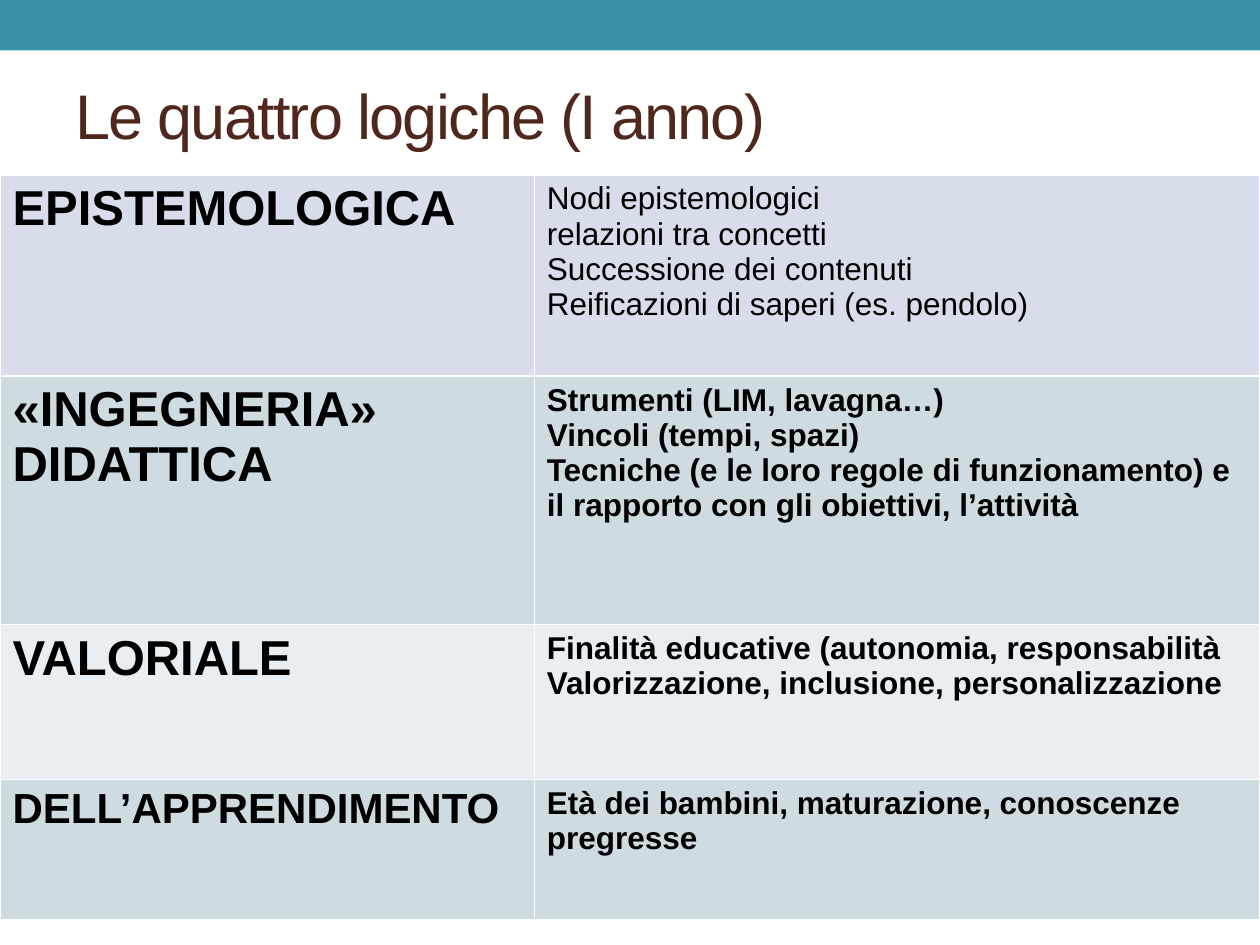
from lxml import etree
from pptx import Presentation
from pptx.dml.color import RGBColor
from pptx.enum.shapes import MSO_SHAPE
from pptx.enum.text import MSO_ANCHOR
from pptx.oxml.ns import qn
from pptx.util import Pt

RECTANGLE = MSO_SHAPE.RECTANGLE
MIDDLE = MSO_ANCHOR.MIDDLE

FONT = "Arial"
COLORS = {
    "band": "3891A7",
    "title": "4F271C",
    "text": "000000",
    "border": "FFFFFF",
    "lavender": "D7DDEB",
    "teal": "CEDCE1",
    "pale": "E8EEF1",
}


def rgb(name):
    return RGBColor.from_string(COLORS[name])


def write(frame, text, size, color="text", bold=False, spacing=None):
    """Fill a text frame, one paragraph for each line of text."""
    for index, line in enumerate(text.split("\n")):
        paragraph = frame.add_paragraph() if index else frame.paragraphs[0]
        run = paragraph.add_run()
        run.text = line
        run.font.name = FONT
        run.font.size = Pt(size)
        run.font.bold = bold
        run.font.color.rgb = rgb(color)
        if spacing is not None:
            run.font._element.set("spc", str(int(spacing * 100)))


class SlideBuilder:
    def __init__(self, slide):
        self.slide = slide

    def band(self, left, top, width, height, color):
        band = self.slide.shapes.add_shape(
            RECTANGLE, Pt(left), Pt(top), Pt(width), Pt(height))
        band.shadow.inherit = False
        band.fill.solid()
        band.fill.fore_color.rgb = rgb(color)
        band.line.fill.background()

    def text(self, left, top, width, height, text, **style):
        box = self.slide.shapes.add_textbox(
            Pt(left), Pt(top), Pt(width), Pt(height))
        box.text_frame.word_wrap = True
        box.text_frame.vertical_anchor = MIDDLE
        write(box.text_frame, text, **style)

    def table(self, left, top, widths, heights):
        table = self.slide.shapes.add_table(
            len(heights), len(widths), Pt(left), Pt(top),
            Pt(sum(widths)), Pt(sum(heights))).table
        for column, width in zip(table.columns, widths):
            column.width = Pt(width)
        for row, height in zip(table.rows, heights):
            row.height = Pt(height)
        return table

    def cell(self, cell, text, fill, **style):
        write(cell.text_frame, text, **style)
        properties = cell._tc.get_or_add_tcPr()
        for side in ("lnL", "lnR", "lnT", "lnB"):
            line = etree.SubElement(properties, qn(f"a:{side}"), w=str(Pt(1)))
            paint = etree.SubElement(line, qn("a:solidFill"))
            etree.SubElement(paint, qn("a:srgbClr"), val=COLORS["border"])
        cell.fill.solid()
        cell.fill.fore_color.rgb = rgb(fill)


# Each logic: name, name size, row height, fill, details, details in bold
LOGICS = [
    ("EPISTEMOLOGICA", 28, 115, "lavender",
     "Nodi epistemologici\nrelazioni tra concetti\nSuccessione dei contenuti\n"
     "Reificazioni di saperi (es. pendolo)", False),
    ("«INGEGNERIA» DIDATTICA", 28, 142, "teal",
     "Strumenti (LIM, lavagna…)\nVincoli (tempi, spazi)\n"
     "Tecniche (e le loro regole di funzionamento) e il rapporto con gli "
     "obiettivi, l’attività", True),
    ("VALORIALE", 28, 88.5, "pale",
     "Finalità educative (autonomia, responsabilità\n"
     "Valorizzazione, inclusione, personalizzazione", True),
    ("DELL’APPRENDIMENTO", 24, 80, "teal",
     "Età dei bambini, maturazione, conoscenze pregresse", True),
]


def main():
    presentation = Presentation()
    presentation.slide_width, presentation.slide_height = Pt(720), Pt(540)
    builder = SlideBuilder(
        presentation.slides.add_slide(presentation.slide_layouts[6]))

    # Top band and title
    builder.band(0, 0, 720, 28.8, "band")
    builder.text(36, 42, 648, 46.8, "Le quattro logiche (I anno)",
                 size=36, color="title", spacing=-1)

    # Table of the four logics
    logics = builder.table(0, 100, [305.3, 414.7],
                           [height for _, _, height, *_ in LOGICS])
    for row, (name, size, _, fill, details, bold) in enumerate(LOGICS):
        builder.cell(logics.cell(row, 0), name, fill, size=size, bold=True)
        builder.cell(logics.cell(row, 1), details, fill, size=18, bold=bold)

    presentation.save("out.pptx")


if __name__ == "__main__":
    main()
